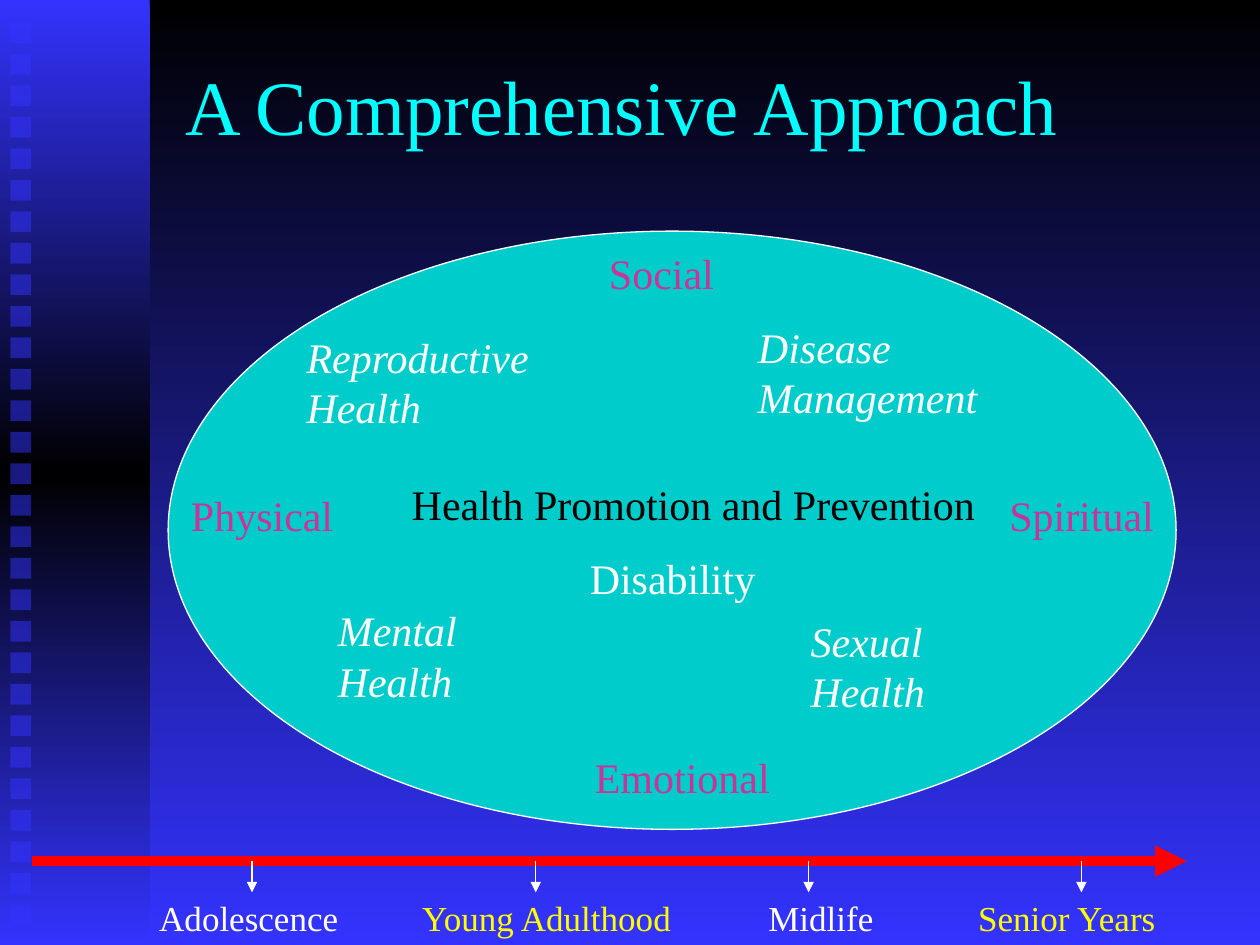
import copy
from dataclasses import dataclass

import pptx
import pptx.dml.color
import pptx.enum.shapes
import pptx.enum.text
import pptx.oxml
import pptx.oxml.ns
import pptx.util

Cm = pptx.util.Cm
Pt = pptx.util.Pt
qn = pptx.oxml.ns.qn
SHAPE = pptx.enum.shapes.MSO_SHAPE
ALIGN = pptx.enum.text.PP_ALIGN


@dataclass(frozen=True)
class Theme:
    font: str = "Times New Roman"
    head: int = 44
    body: int = 24
    small: int = 20
    black: str = "000000"
    white: str = "FFFFFF"
    blue: str = "3333FF"
    cyan: str = "00FFFF"
    teal: str = "00CCCC"
    pink: str = "CC3399"
    red: str = "FF0000"
    yellow: str = "FFFF00"


THEME = Theme()


def tint(code):
    return pptx.dml.color.RGBColor.from_string(code)


def add_tag(parent, name, **values):
    child = pptx.oxml.parse_xml(f'<a:{name} {pptx.oxml.ns.nsdecls("a")}/>')
    for key, value in values.items():
        child.set(key, value)
    parent.append(child)


def blend(fill, *codes):
    """Fill from top to bottom with evenly spaced colours."""
    fill.gradient()
    fill.gradient_angle = 270
    first = fill.gradient_stops[0]._gs
    for _ in codes[2:]:
        first.addnext(copy.deepcopy(first))
    for i, (stop, code) in enumerate(zip(fill.gradient_stops, codes)):
        stop.position = i / (len(codes) - 1)
        stop.color.rgb = tint(code)


def add_form(slide, kind, box, color=None, edge=None):
    form = slide.shapes.add_shape(kind, *map(Cm, box))
    form.shadow.inherit = False
    if color:
        form.fill.solid()
        form.fill.fore_color.rgb = tint(color)
    if edge:
        form.line.color.rgb = tint(edge)
        form.line.width = Pt(0.75)
    else:
        form.line.fill.background()
    return form


def add_label(slide, text, box, color, size=THEME.body, slant=False,
              align=ALIGN.LEFT):
    label = slide.shapes.add_textbox(*map(Cm, box))
    frame = label.text_frame
    frame.word_wrap = True
    para = frame.paragraphs[0]
    para.alignment = align
    run = para.add_run()
    run.text = text
    run.font.name = THEME.font
    run.font.size = Pt(size)
    run.font.italic = slant
    run.font.color.rgb = tint(color)
    return frame


def add_arrow(slide, start, end, color, width):
    arrow = slide.shapes.add_connector(
        pptx.enum.shapes.MSO_CONNECTOR.STRAIGHT,
        *map(Cm, (*start, *end)))
    arrow.line.color.rgb = tint(color)
    arrow.line.width = Pt(width)
    props = arrow._element.spPr
    add_tag(props.find(qn("a:ln")), "tailEnd", type="triangle")
    add_tag(props, "effectLst")


def add_back(slide):
    blend(slide.background.fill, THEME.black, THEME.blue)
    side = add_form(slide, SHAPE.RECTANGLE, (0, 0, 3.02, 19.05))
    blend(side.fill, THEME.blue, THEME.black, THEME.blue)
    # Column of half-clear squares
    count, first, last = 29, 0.45, 18.23
    step = (last - first) / (count - 1)
    for i in range(count):
        square = add_form(slide, SHAPE.RECTANGLE,
                          (0.21, first + i * step, 0.42, 0.42), THEME.blue)
        shade = square._element.spPr.find(qn("a:solidFill"))[0]
        add_tag(shade, "alpha", val="50000")


def add_model(slide):
    add_form(slide, SHAPE.OVAL, (3.39, 4.66, 20.32, 12.06),
             THEME.teal, THEME.white)
    # Four sides of health around the rim
    for text, box, align in (
            ("Social", (10.16, 4.87, 6.35, 1.27), ALIGN.CENTER),
            ("Emotional", (10.37, 15.03, 6.77, 1.27), ALIGN.CENTER),
            ("Spiritual", (19.9, 9.74, 3.81, 1.27), ALIGN.CENTER),
            ("Physical", (3.6, 9.74, 5.08, 1.27), ALIGN.LEFT)):
        add_label(slide, text, box, THEME.pink, align=align)
    # Fields of care
    for text, box in (
            ("Reproductive Health", (5.93, 6.56, 5.5, 2.29)),
            ("Mental Health", (6.56, 12.07, 4.23, 2.29)),
            ("Disease Management", (15.03, 6.35, 6.35, 3.81)),
            ("Sexual Health", (16.09, 12.28, 4.23, 2.29))):
        add_label(slide, text, box, THEME.white, slant=True)
    # Centre
    add_label(slide, "Health Promotion and Prevention",
              (8.05, 9.53, 12.49, 1.27), THEME.black)
    add_label(slide, "Disability", (11.64, 11.01, 5.72, 1.27), THEME.white)


def add_ages(slide):
    top = 17.36
    add_arrow(slide, (0.64, top), (23.92, top), THEME.red, 6)
    for text, left, width, mark, color in (
            ("Adolescence", 2.96, 4.23, 5.08, THEME.white),
            ("Young Adulthood", 8.26, 5.63, 10.8, THEME.yellow),
            ("Midlife", 15.24, 2.96, 16.3, THEME.white),
            ("Senior Years", 19.47, 4.45, 21.8, THEME.yellow)):
        add_arrow(slide, (mark, top), (mark, top + 0.63), THEME.white, 0.75)
        add_label(slide, text, (left, 17.95, width, 1.1), color, THEME.small)


def main():
    deck = pptx.Presentation()
    deck.slide_width, deck.slide_height = Cm(25.4), Cm(19.05)
    slide = deck.slides.add_slide(deck.slide_layouts[6])
    add_back(slide)
    title = add_label(slide, " A Comprehensive Approach",
                      (3.18, 0.42, 21.59, 3.39), THEME.cyan, THEME.head)
    title.vertical_anchor = pptx.enum.text.MSO_ANCHOR.MIDDLE
    add_model(slide)
    add_ages(slide)
    deck.save("out.pptx")


if __name__ == "__main__":
    main()
